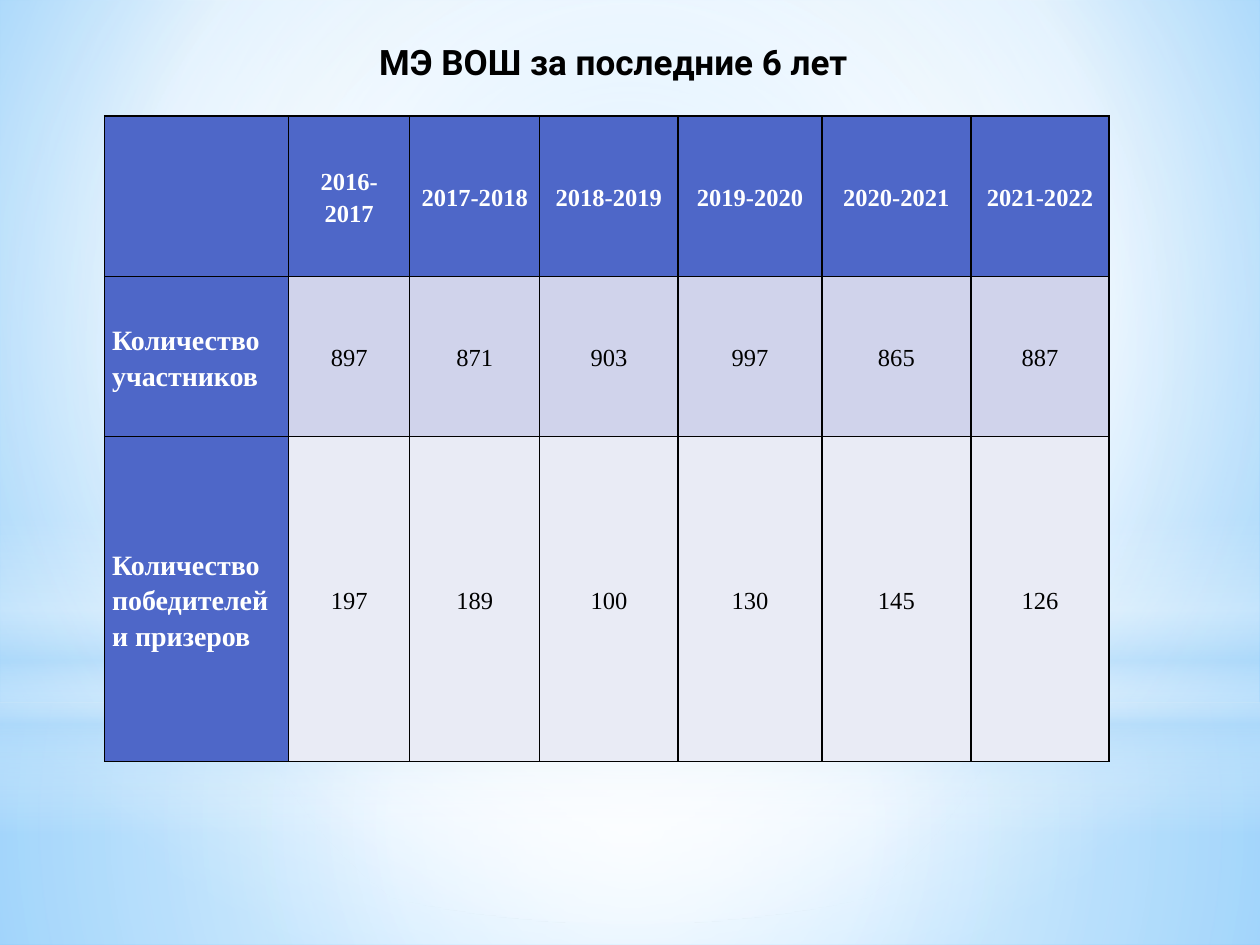
"""Build a slide with a table of olympiad participants and winners over six years."""
from lxml.etree import SubElement
from pptx import Presentation
from pptx.dml.color import RGBColor
from pptx.enum.shapes import MSO_SHAPE
from pptx.enum.text import MSO_ANCHOR, MSO_AUTO_SIZE, PP_ALIGN
from pptx.oxml import parse_xml
from pptx.oxml.ns import nsdecls, qn
from pptx.util import Cm, Pt

COLORS = {
    "black": "000000", "white": "FFFFFF", "header": "4E67C8",
    "participants": "D0D3EB", "winners": "E9EBF5",
    "sky": "9ED5FF", "deep_sky": "5BB9FF", "haze": "B4DCFA",
}
CENTER = (50, 50, 50, 50)


def apply_gradient(element, stops, focus):
    """Swap the solid fill of an element for a radial or vertical gradient."""
    gradient = parse_xml(f'<a:gradFill {nsdecls("a")} rotWithShape="1"/>')
    stop_list = SubElement(gradient, qn("a:gsLst"))
    for position, name, opacity in stops:
        stop = SubElement(stop_list, qn("a:gs"), pos=str(position * 1000))
        color = SubElement(stop, qn("a:srgbClr"), val=COLORS[name])
        if opacity < 100:
            SubElement(color, qn("a:alpha"), val=str(opacity * 1000))
    if focus:
        radial = SubElement(gradient, qn("a:path"), {"path": "circle"})
        edges = {side: str(value * 1000) for side, value in zip("ltrb", focus)}
        SubElement(radial, qn("a:fillToRect"), edges)
    else:
        SubElement(gradient, qn("a:lin"), ang="5400000", scaled="0")
    solid = element.xpath(".//a:solidFill")[0]
    solid.getparent().replace(solid, gradient)


def format_paragraph(para, font_name, size, color, bold, alignment):
    """Set alignment and font for a paragraph and its runs."""
    para.alignment = alignment
    for span in para.runs:
        span.font.name = font_name
        span.font.size = Pt(size)
        span.font.bold = bold
        span.font.color.rgb = RGBColor.from_string(COLORS[color])


deck = Presentation()
deck.slide_width, deck.slide_height = Cm(25.4), Cm(19.05)
page = deck.slides.add_slide(deck.slide_layouts[6])

page.background.fill.solid()
apply_gradient(
    page.element,
    [(0, "sky", 100), (60, "white", 100), (100, "deep_sky", 100)],
    (20, 10, 20, 60),
)

layers = [
    (MSO_SHAPE.RECTANGLE, 14.17, 4.88, CENTER,
     [(0, "white", 91), (37, "white", 76), (100, "haze", 79)]),
    (MSO_SHAPE.RECTANGLE, 0, 14.17, CENTER,
     [(0, "white", 89), (48, "white", 62), (100, "haze", 79)]),
    (MSO_SHAPE.RECTANGLE, 10.46, 6.35, None,
     [(0, "white", 0), (29, "white", 30), (45, "haze", 40),
      (55, "white", 26), (65, "haze", 60), (100, "white", 0)]),
    (MSO_SHAPE.OVAL, 4.45, 14.17, CENTER,
     [(0, "white", 100), (56, "white", 0)]),
]
for preset, top, height, focus, stops in layers:
    layer = page.shapes.add_shape(preset, 0, Cm(top), deck.slide_width, Cm(height))
    layer.shadow.inherit = False
    layer.line.fill.background()
    layer.fill.solid()
    apply_gradient(layer.element, stops, focus)

column_widths = [3.71, 2.44, 2.62, 2.79, 2.9, 3, 2.79]
row_heights = [3.23, 3.23, 6.55]
rows = [
    ["", "2016-2017", "2017-2018", "2018-2019", "2019-2020", "2020-2021", "2021-2022"],
    ["Количество участников", "897", "871", "903", "997", "865", "887"],
    ["Количество победителей и призеров", "197", "189", "100", "130", "145", "126"],
]
row_fills = ["header", "participants", "winners"]

table = page.shapes.add_table(
    len(rows), len(column_widths), Cm(2.11), Cm(2.34),
    Cm(sum(column_widths)), Cm(sum(row_heights)),
).table
for column, width in zip(table.columns, column_widths):
    column.width = Cm(width)
for row, height in zip(table.rows, row_heights):
    row.height = Cm(height)

for row_index, values in enumerate(rows):
    for column_index, value in enumerate(values):
        cell = table.cell(row_index, column_index)
        is_label = column_index == 0
        is_header = is_label or row_index == 0
        cell.text_frame.text = value
        cell.vertical_anchor = MSO_ANCHOR.MIDDLE
        cell.margin_left = cell.margin_right = Cm(0.15)
        cell.margin_top = cell.margin_bottom = 0
        cell.fill.solid()
        fill_name = "header" if is_header else row_fills[row_index]
        cell.fill.fore_color.rgb = RGBColor.from_string(COLORS[fill_name])
        para = cell.text_frame.paragraphs[0]
        para.line_spacing = 1.15
        format_paragraph(
            para, "Times New Roman", 16 if is_label else 14,
            "white" if is_header else "black", is_header,
            PP_ALIGN.LEFT if is_label else PP_ALIGN.CENTER,
        )
        properties = cell._tc.get_or_add_tcPr()
        for order, side in enumerate("LRTB"):
            properties.insert(order, parse_xml(
                f'<a:ln{side} {nsdecls("a")} w="{Pt(1)}"><a:solidFill>'
                f'<a:srgbClr val="{COLORS["black"]}"/></a:solidFill></a:ln{side}>'
            ))

title = page.shapes.add_textbox(Cm(5.23), Cm(0.69), Cm(14.27), Cm(1.12))
title.text_frame.word_wrap = True
title.text_frame.auto_size = MSO_AUTO_SIZE.SHAPE_TO_FIT_TEXT
title.text_frame.text = "МЭ ВОШ за последние 6 лет"
format_paragraph(
    title.text_frame.paragraphs[0], "Roboto", 20, "black", True, PP_ALIGN.CENTER
)

deck.save("out.pptx")
